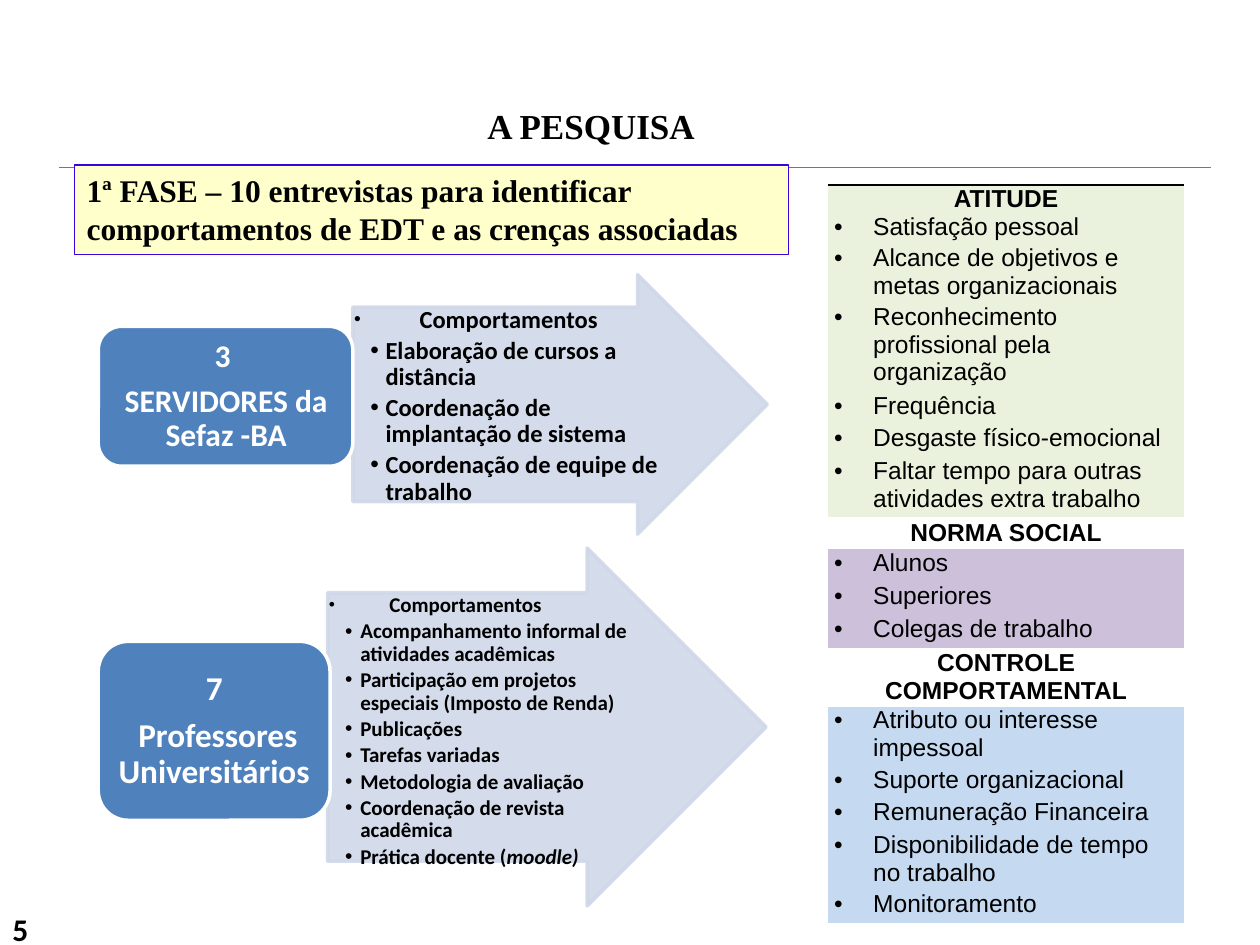
"""Build the slide on the first phase of the research."""
from lxml.etree import SubElement as Sub
from pptx import Presentation
from pptx.dml.color import RGBColor
from pptx.enum.shapes import MSO_CONNECTOR as Link, MSO_SHAPE as Kind
from pptx.enum.text import MSO_ANCHOR as Anchor, PP_ALIGN as Align
from pptx.oxml import parse_xml
from pptx.oxml.ns import qn
from pptx.util import Inches, Pt


def write(frame, text, font="Calibri", size=18, color="000000", bold=True,
          align=Align.LEFT, left=0, hang=0, tab=0, level=0, gap=0, pitch=1.0):
    """Add a paragraph; text is a string or a list of (text, size, italic)."""
    para = frame.paragraphs[0]
    if para.runs:
        para = frame.add_paragraph()
    para.alignment, para.level = align, level
    para.line_spacing, para.space_after = pitch, Pt(gap)
    if hang:
        props = para._p.get_or_add_pPr()
        props.set("marL", str(Inches(left)))
        props.set("indent", str(Inches(-hang)))
        Sub(props, qn("a:buFont")).set("typeface", "Arial")
        Sub(props, qn("a:buChar")).set("char", "•")
        if tab:
            stop = Sub(Sub(props, qn("a:tabLst")), qn("a:tab"))
            stop.set("pos", str(Inches(tab)))
            stop.set("algn", "l")
    parts = [(text, size, False)] if isinstance(text, str) else text
    for words, points, slant in parts:
        run = para.add_run()
        run.text = words
        run.font.name, run.font.size = font, Pt(points)
        run.font.bold, run.font.italic = bold, slant
        run.font.color.rgb = RGBColor.from_string(color)


def draw(kind, box, fill=None, line=None, width=2, inset=(0.1, 0.05), anchor=Anchor.TOP):
    """Add a shape, or a text box when kind is None."""
    spot = [Inches(n) for n in box]
    if kind is None:
        shape = slide.shapes.add_textbox(*spot)
    else:
        shape = slide.shapes.add_shape(kind, *spot)
        shape.shadow.inherit = False
        shape.fill.solid()
        shape.fill.fore_color.rgb = RGBColor.from_string(fill)
        shape.line.color.rgb = RGBColor.from_string(line)
        shape.line.width = Pt(width)
    frame = shape.text_frame
    frame.word_wrap, frame.vertical_anchor = True, anchor
    frame.margin_left = frame.margin_right = Inches(inset[0])
    frame.margin_top = frame.margin_bottom = Inches(inset[1])
    return shape


deck = Presentation()
deck.slide_width, deck.slide_height = Inches(10), Inches(7.5)
slide = deck.slides.add_slide(deck.slide_layouts[6])

rule = slide.shapes.add_connector(
    Link.STRAIGHT, Inches(0.47), Inches(1.33), Inches(9.61), Inches(1.33))
rule.line.color.rgb = RGBColor.from_string("4B7EBC")
rule.line.width = Pt(0.75)
Sub(rule._element.spPr, qn("a:effectLst"))

write(draw(None, (0, 7.17, 10, 0.17)).text_frame, "5")
write(draw(None, (3.77, 0.78, 2.6, 0.44)).text_frame, "A PESQUISA",
      font="Times New Roman", size=20)

groups = [
    dict(arrow=(2.8, 2.18, 3.29, 2.06), list=(2.8, 2.43, 2.52, 1.55),
         box=(0.78, 2.59, 2.02, 1.11), label=(0.84, 2.65, 1.91, 1),
         names=["3 ", "SERVIDORES da Sefaz -BA"], big=18, size=14, dot=11,
         gap=2.4, tab=0.52, inset=0.07,
         items=["Elaboração de cursos a distância",
                "Coordenação de implantação de sistema",
                "Coordenação de equipe de trabalho"]),
    dict(arrow=(2.6, 4.35, 3.48, 2.84), list=(2.6, 4.71, 2.41, 2.13),
         box=(0.78, 5.09, 1.84, 1.42), label=(0.85, 5.16, 1.7, 1.28),
         names=["7", " Professores Universitários"], big=19, size=12, dot=10,
         gap=2, tab=0.48, inset=0.08,
         items=["Acompanhamento informal de atividades acadêmicas",
                "Participação em projetos especiais (Imposto de Renda)",
                "Publicações", "Tarefas variadas", "Metodologia de avaliação",
                "Coordenação de revista acadêmica",
                [("Prática docente (", 12, False), ("moodle)", 12, True)]]),
]
for group in groups:
    arrow = draw(Kind.RIGHT_ARROW, group["arrow"], "D0D8E8", "D0D8E8")
    arrow.adjustments[0], arrow.adjustments[1] = 0.75, 0.5
    for tint in arrow._element.spPr.iter(qn("a:srgbClr")):
        Sub(tint, qn("a:alpha")).set("val", "90000")

    frame = draw(None, group["list"], inset=(0.01, 0.01)).text_frame
    head = [("\t", group["dot"], False), ("Comportamentos", group["size"], False)]
    look = dict(gap=group["gap"], pitch=0.9)
    write(frame, head, left=0.06, hang=0.06, tab=group["tab"], level=1, **look)
    for item in group["items"]:
        write(frame, item, size=group["size"], left=0.25, hang=0.12, level=2, **look)

    draw(Kind.ROUNDED_RECTANGLE, group["box"], "4F81BD", "FFFFFF")
    frame = draw(None, group["label"], inset=(group["inset"], 0.04),
                 anchor=Anchor.MIDDLE).text_frame
    for name in group["names"]:
        write(frame, name, size=group["big"], color="FFFFFF",
              align=Align.CENTER, gap=6.4, pitch=0.9)

phase = draw(Kind.RECTANGLE, (0.59, 1.31, 5.67, 0.71), "FFFFCC", "3B02DC", 0.75)
write(phase.text_frame,
      "1ª FASE – 10 entrevistas para identificar comportamentos de EDT "
      "e as crenças associadas", font="Times New Roman")

green, white, mauve, blue = "EAF1DD", "FFFFFF", "CCC0DA", "C5D9F1"
one, two, three = 0.26, 0.47, 0.7
rows = [
    (two, green, "ATITUDE", "Satisfação pessoal"),
    (two, green, "", "Alcance de objetivos e metas organizacionais"),
    (three, green, "", "Reconhecimento profissional pela organização"),
    (one, green, "", "Frequência"),
    (one, green, "", "Desgaste físico-emocional"),
    (two, green, "", "Faltar tempo para outras atividades extra trabalho"),
    (one, white, "NORMA SOCIAL", ""),
    (one, mauve, "", "Alunos"),
    (one, mauve, "", "Superiores"),
    (one, mauve, "", "Colegas de trabalho"),
    (two, white, "CONTROLE COMPORTAMENTAL", ""),
    (two, blue, "", "Atributo ou interesse impessoal"),
    (one, blue, "", "Suporte organizacional"),
    (one, blue, "", "Remuneração Financeira"),
    (two, blue, "", "Disponibilidade de tempo no trabalho"),
    (one, blue, "", "Monitoramento"),
]
high = sum(row[0] for row in rows)
table = slide.shapes.add_table(
    len(rows), 1, Inches(6.57), Inches(1.47), Inches(2.83), Inches(high)).table
table.first_row = table.horz_banding = False
style = table._tbl.tblPr.find(qn("a:tableStyleId"))
style.text = "{2D5ABB26-0587-4C30-8999-92F81FD0307C}"
for at, (tall, fill, head, item) in enumerate(rows):
    table.rows[at].height = Inches(tall)
    cell = table.cell(at, 0)
    cell.margin_left = cell.margin_right = Inches(0.05)
    cell.margin_top = cell.margin_bottom = 0
    cell.vertical_anchor = Anchor.TOP if item else Anchor.MIDDLE
    cell.fill.solid()
    cell.fill.fore_color.rgb = RGBColor.from_string(fill)
    if head:
        write(cell.text_frame, head, font="Arial", size=14, align=Align.CENTER)
    if item:
        write(cell.text_frame, item, font="Arial", size=14, bold=False,
              left=0.31, hang=0.31)

edge = parse_xml(
    '<a:lnT xmlns:a="http://schemas.openxmlformats.org/drawingml/2006/main" '
    f'w="{Pt(1.5)}"><a:solidFill><a:srgbClr val="000000"/></a:solidFill></a:lnT>')
table.cell(0, 0)._tc.get_or_add_tcPr().insert(0, edge)

deck.save("out.pptx")
